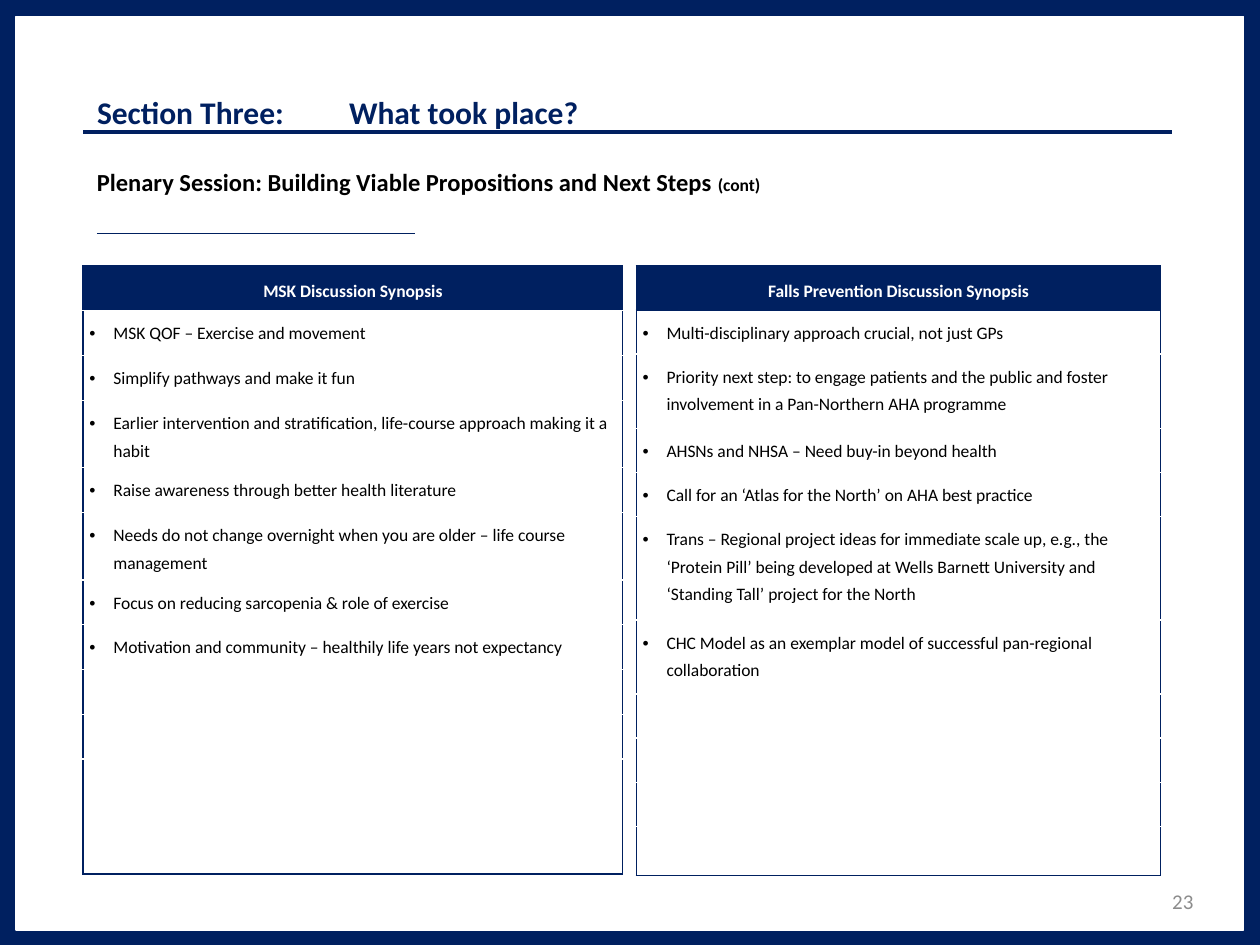
from dataclasses import dataclass

from lxml import etree
from pptx import Presentation
from pptx import util as u
from pptx.dml.color import RGBColor
from pptx.enum import shapes, text
from pptx.oxml.ns import qn

NAVY = RGBColor(0x00, 0x20, 0x60)
WHITE = RGBColor(0xFF, 0xFF, 0xFF)
BLACK = RGBColor(0x00, 0x00, 0x00)
GREY = RGBColor(0x8C, 0x8C, 0x8C)
FONT = "Calibri"

# The slide is a grid of 100 columns by 75 rows of square cells.
WIDE, HIGH = u.Inches(10), u.Inches(7.5)
CELL = WIDE // 100
ROWS = 11


@dataclass
class Panel:
    left: float
    width: float
    head: str
    points: list[str]
    row: float          # usual row height
    tall: dict[int, float]  # rows of another height
    rule: RGBColor      # line under the heading


PANELS = [
    Panel(6.6, 42.8, "MSK Discussion Synopsis", [
        "MSK QOF – Exercise and movement",
        "Simplify pathways and make it fun",
        "Earlier intervention and stratification, life-course approach making it a habit",
        "Raise awareness through better health literature",
        "Needs do not change overnight when you are older – life course management",
        "Focus on reducing sarcopenia & role of exercise",
        "Motivation and community – healthily life years not expectancy",
    ], 3.56, {3: 5.2, 5: 5.2, 10: 9.1}, WHITE),
    Panel(50.5, 41.6, "Falls Prevention Discussion Synopsis", [
        "Multi-disciplinary approach crucial, not just GPs",
        "Priority next step: to engage patients and the public and foster "
        "involvement in a Pan-Northern AHA programme",
        "AHSNs and NHSA – Need buy-in beyond health",
        "Call for an ‘Atlas for the North’ on AHA best practice",
        "Trans – Regional project ideas for immediate scale up, e.g., the "
        "‘Protein Pill’ being developed at Wells Barnett University and "
        "‘Standing Tall’ project for the North",
        "CHC Model as an exemplar model of successful pan-regional collaboration",
    ], 3.5, {2: 5.9, 5: 8.2, 6: 5.9, 10: 3.9}, NAVY),
]


def grid(*cells: float) -> list[int]:
    return [round(n * CELL) for n in cells]


def style(run, size: float, color: RGBColor, bold: bool = False) -> None:
    font = run.font
    font.name, font.size, font.bold = FONT, u.Pt(size), bold
    font.color.rgb = color


def line(slide, left: float, right: float, top: float, weight: float) -> None:
    rule = slide.shapes.add_connector(
        shapes.MSO_CONNECTOR.STRAIGHT, *grid(left, top, right, top))
    rule.line.color.rgb = NAVY
    rule.line.width = u.Pt(weight)
    etree.SubElement(rule._element.spPr, qn("a:effectLst"))


def box(slide, *place: float):
    frame = slide.shapes.add_textbox(*grid(*place)).text_frame
    frame.word_wrap = True
    return frame


def edge(cell, **sides: RGBColor) -> None:
    """Draw the cell's borders; sides come in the order L, R, T, B."""
    props = cell._tc.get_or_add_tcPr()
    for spot, (side, color) in enumerate(sides.items()):
        ln = etree.Element(qn(f"a:ln{side}"), w=str(u.Pt(1)))
        fill = etree.SubElement(ln, qn("a:solidFill"))
        etree.SubElement(fill, qn("a:srgbClr"), val=str(color))
        props.insert(spot, ln)


def bullet(par) -> None:
    props = par._p.get_or_add_pPr()
    props.set("marL", str(u.Inches(0.19)))
    props.set("indent", str(-u.Inches(0.19)))
    etree.SubElement(props, qn("a:buFont"), typeface="Arial")
    etree.SubElement(props, qn("a:buChar"), char="•")


def write(cell, words: str, head: bool) -> None:
    cell.margin_left = cell.margin_right = u.Inches(0.05)
    cell.margin_top = cell.margin_bottom = u.Inches(0.05)
    par = cell.text_frame.paragraphs[0]
    if not words:
        etree.SubElement(par._p, qn("a:endParaRPr"), sz="1000")
        return
    par.text = words
    par.line_spacing, par.space_after = 1.3, u.Pt(12)
    style(par.runs[0], 10, WHITE if head else BLACK, head)
    if head:
        par.alignment = text.PP_ALIGN.CENTER
        cell.vertical_anchor = text.MSO_ANCHOR.MIDDLE
    else:
        bullet(par)


def draw(slide, panel: Panel) -> None:
    sizes = [panel.tall.get(n, panel.row) for n in range(ROWS)]
    place = grid(panel.left, 21.1, panel.width, sum(sizes))
    table = slide.shapes.add_table(ROWS, 1, *place).table
    table.first_row = table.horz_banding = False
    lines = [panel.head, *panel.points]
    for n, size in enumerate(sizes):
        table.rows[n].height = grid(size)[0]
        cell = table.cell(n, 0)
        write(cell, lines[n] if n < len(lines) else "", n == 0)
        if n == 0:
            cell.fill.solid()
            cell.fill.fore_color.rgb = NAVY
        else:
            cell.fill.background()
        top = NAVY if n == 0 else panel.rule if n == 1 else WHITE
        base = panel.rule if n == 0 else NAVY if n == ROWS - 1 else WHITE
        edge(cell, L=NAVY, R=NAVY, T=top, B=base)


def title(slide) -> None:
    head = slide.shapes.title
    head.left, head.top, head.width, head.height = grid(6.7, 5.3, 86.2, 4.9)
    frame = head.text_frame
    frame.text = " \vSection Three: \tWhat took place?"
    frame.word_wrap = True
    frame.auto_size = text.MSO_AUTO_SIZE.NONE
    frame.vertical_anchor = text.MSO_ANCHOR.MIDDLE
    par = frame.paragraphs[0]
    par.alignment, par.line_spacing = text.PP_ALIGN.LEFT, 0.9
    for run in par.runs:
        style(run, 18, NAVY, True)


def main() -> None:
    deck = Presentation()
    deck.slide_width, deck.slide_height = WIDE, HIGH
    slide = deck.slides.add_slide(deck.slide_layouts[5])
    slide.background.fill.solid()
    slide.background.fill.fore_color.rgb = NAVY

    page = slide.shapes.add_shape(
        shapes.MSO_SHAPE.RECTANGLE, *grid(1.3, 1.3, 97.4, 72.5))
    page.shadow.inherit = False
    page.fill.solid()
    page.fill.fore_color.rgb = page.line.color.rgb = WHITE
    page.line.width = u.Pt(1)
    slide.shapes._spTree.insert(2, page._element)

    title(slide)
    line(slide, 6.6, 93, 10.5, 2.25)

    par = box(slide, 6.7, 12.8, 86.2, 4).paragraphs[0]
    par.alignment = text.PP_ALIGN.JUSTIFY
    for words, size in (
            ("Plenary Session: Building Viable Propositions and Next Steps ", 14),
            ("(cont)", 10)):
        run = par.add_run()
        run.text = words
        style(run, size, BLACK, True)
    line(slide, 7.7, 32.9, 18.5, 0.5)

    frame = box(slide, 73.2, 69.5, 22.5, 4)
    frame.vertical_anchor = text.MSO_ANCHOR.MIDDLE
    frame.text = "23"
    frame.paragraphs[0].alignment = text.PP_ALIGN.RIGHT
    style(frame.paragraphs[0].runs[0], 12, GREY)

    for panel in PANELS:
        draw(slide, panel)
    deck.save("out.pptx")


if __name__ == "__main__":
    main()
